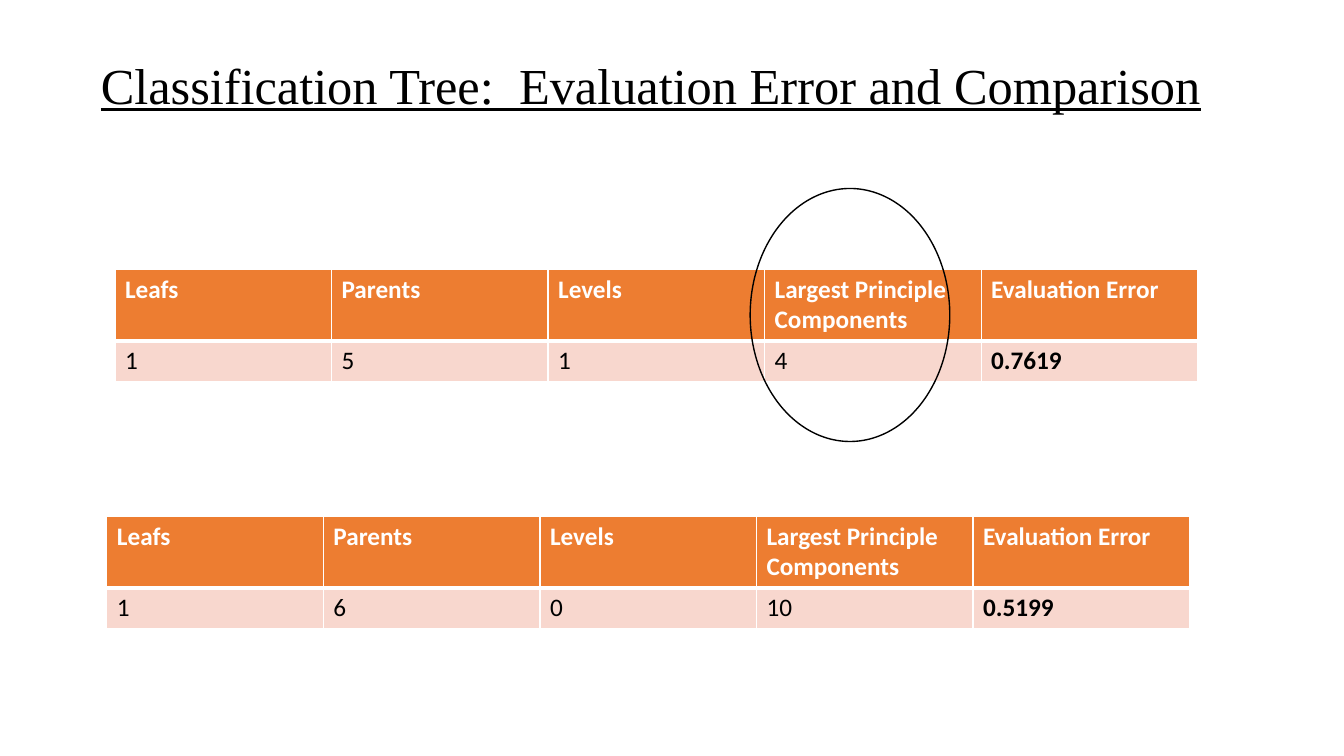
from dataclasses import dataclass

from lxml.etree import SubElement
from pptx import Presentation
from pptx.dml.color import RGBColor as RGB
from pptx.enum.shapes import MSO_SHAPE as SHAPE
from pptx.enum.text import MSO_ANCHOR as ANCHOR, PP_ALIGN as ALIGN
from pptx.oxml.ns import qn
from pptx.util import Inches, Pt


@dataclass(frozen=True)
class Theme:
    title_font: str = "Times New Roman"
    body_font: str = "Calibri"
    title_size: int = 36
    body_size: int = 18
    ink: str = "000000"
    paper: str = "FFFFFF"
    header_fill: str = "ED7D31"
    row_fill: str = "F8D7CE"
    thin: int = 1
    thick: int = 3


THEME = Theme()
HEADERS = ["Leafs", "Parents", "Levels", "Largest Principle\nComponents", "Evaluation Error"]
ROW_HEIGHTS = [0.7, 0.4]
TABLE_SIZE = (10.74, sum(ROW_HEIGHTS))


def write(tf, text, font=THEME.body_font, size=THEME.body_size, color=THEME.ink,
          bold=False, underline=False, spacing=None):
    """Fill the frame with one left-aligned paragraph per line of text."""
    tf.text = text
    for p in tf.paragraphs:
        p.alignment = ALIGN.LEFT
        p.line_spacing = spacing
        for r in p.runs:
            f = r.font
            f.name, f.size, f.bold, f.underline = font, Pt(size), bold, underline
            f.color.rgb = RGB.from_string(color)


def set_borders(cell, color, **widths):
    """Draw borders in points, given as L, R, T, B in that order."""
    tcPr = cell._tc.get_or_add_tcPr()
    for side, width in widths.items():
        ln = SubElement(tcPr, qn(f"a:ln{side}"), w=str(Pt(width)))
        SubElement(SubElement(ln, qn("a:solidFill")), qn("a:srgbClr"), val=color)


def add_title(s, text, box):
    sp = s.shapes.title
    sp.left, sp.top, sp.width, sp.height = map(Inches, box)
    tf = sp.text_frame
    tf.word_wrap = True
    tf.vertical_anchor = ANCHOR.MIDDLE
    write(tf, text, font=THEME.title_font, size=THEME.title_size, underline=True, spacing=0.9)


def add_result_table(s, values, box):
    """Add a header row and one row of values, the error in bold."""
    table = s.shapes.add_table(2, len(HEADERS), *map(Inches, box)).table
    for col in table.columns:
        col.width = Inches(box[2] / len(HEADERS))
    for i, (texts, height) in enumerate(zip([HEADERS, values], ROW_HEIGHTS)):
        header = i == 0
        table.rows[i].height = Inches(height)
        for j, text in enumerate(texts):
            cell = table.cell(i, j)
            write(cell.text_frame, text, color=THEME.paper if header else THEME.ink,
                  bold=header or j == len(HEADERS) - 1)
            set_borders(cell, THEME.paper, L=THEME.thin, R=THEME.thin,
                        T=THEME.thin if header else THEME.thick,
                        B=THEME.thick if header else THEME.thin)
            cell.fill.solid()
            fill = THEME.header_fill if header else THEME.row_fill
            cell.fill.fore_color.rgb = RGB.from_string(fill)


def add_highlight(s, box):
    sp = s.shapes.add_shape(SHAPE.OVAL, *map(Inches, box))
    sp.shadow.inherit = False
    sp.fill.background()
    sp.line.color.rgb = RGB.from_string(THEME.ink)
    sp.line.width = Pt(THEME.thin)


def main():
    prs = Presentation()
    prs.slide_width, prs.slide_height = Inches(13.33), Inches(7.5)
    s = prs.slides.add_slide(prs.slide_layouts[5])
    add_title(s, "Classification Tree:  Evaluation Error and Comparison", (0.9, 0.4, 11.5, 0.94))
    add_result_table(s, ["1", "5", "1", "4", "0.7619"], (1.14, 2.67, *TABLE_SIZE))
    add_result_table(s, ["1", "6", "0", "10", "0.5199"], (1.06, 5.12, *TABLE_SIZE))
    add_highlight(s, (7.44, 1.87, 1.98, 2.51))
    prs.save("out.pptx")


if __name__ == "__main__":
    main()
